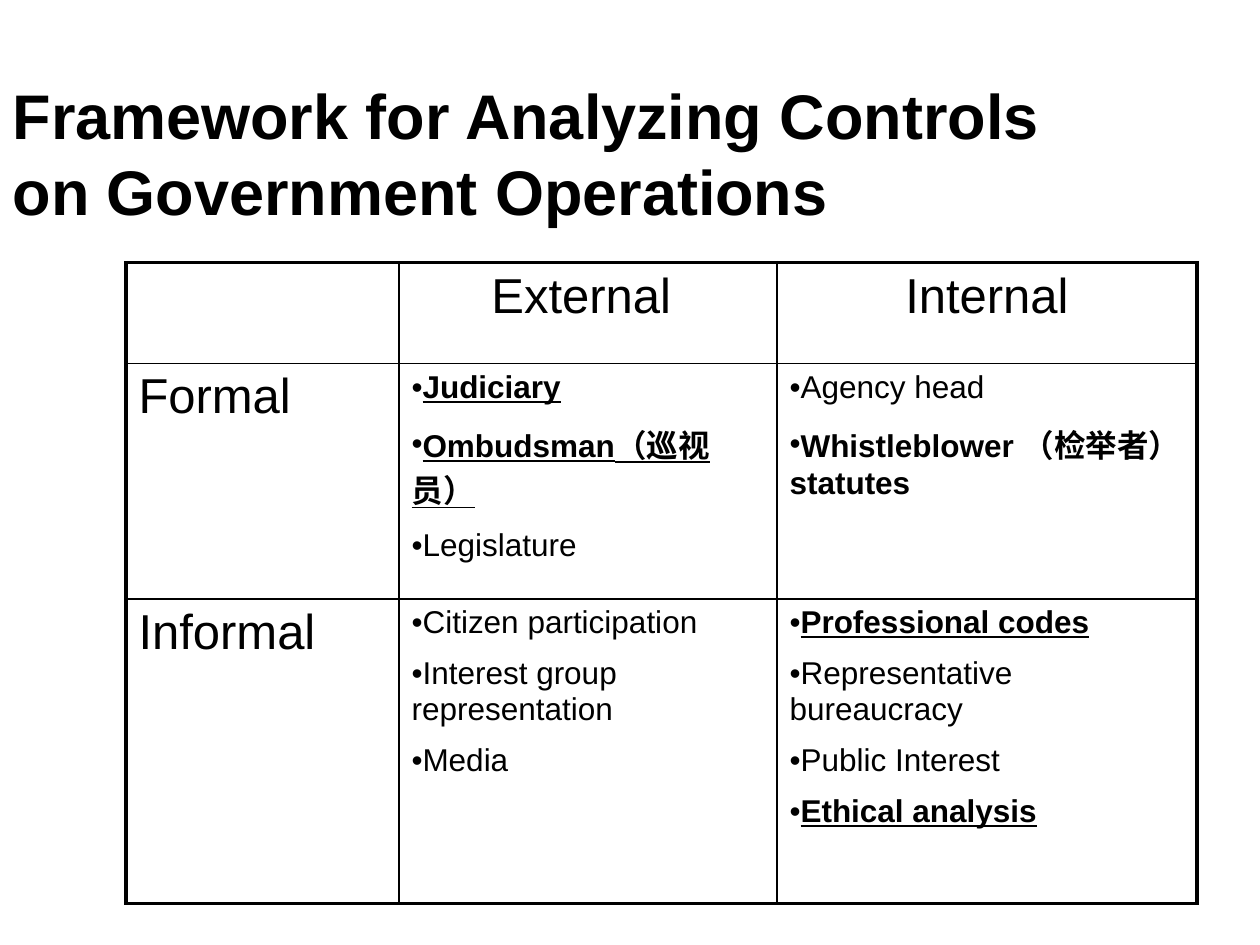
from lxml.etree import SubElement
from pptx import Presentation
from pptx.dml.color import RGBColor
from pptx.enum.text import MSO_ANCHOR, MSO_AUTO_SIZE, PP_ALIGN
from pptx.oxml.ns import qn
from pptx.util import Pt

FONT = "Arial"
INK = "000000"
HEAD_SIZE, LIST_SIZE = 28, 18
OUTER, INNER = 2.25, 1
COLS = [156, 216, 240]
ROWS = [57.6, 134.6, 174.2]

# Each list item is (text, bold, underline)
HEADERS = ["", "External ", "Internal"]
BODY = [
    ("Formal",
     [("Judiciary", True, True),
      ("Ombudsman（巡视员）", True, True),
      ("Legislature", False, False)],
     [("Agency head", False, False),
      ("Whistleblower （检举者）statutes", True, False)]),
    ("Informal",
     [("Citizen participation", False, False),
      ("Interest group representation", False, False),
      ("Media", False, False)],
     [("Professional codes", True, True),
      ("Representative bureaucracy", False, False),
      ("Public Interest", False, False),
      ("Ethical analysis", True, True)]),
]


def color(value):
    return RGBColor.from_string(value)


def add_run(p, text, size, bold=False, underline=False):
    r = p.add_run()
    r.text = text
    r.font.name = FONT
    r.font.size = Pt(size)
    r.font.bold = bold
    r.font.underline = underline
    r.font.color.rgb = color(INK)


def set_borders(cell, widths):
    tc_pr = cell._tc.get_or_add_tcPr()
    for side, width in zip("LRTB", widths):
        ln = SubElement(tc_pr, qn(f"a:ln{side}"), w=str(Pt(width)))
        fill = SubElement(ln, qn("a:solidFill"))
        SubElement(fill, qn("a:srgbClr"), val=INK)


def add_heading(cell, text, align):
    p = cell.text_frame.paragraphs[0]
    p.alignment = align
    add_run(p, text, HEAD_SIZE)


def add_bullets(cell, items):
    tf = cell.text_frame
    for i, (text, bold, underline) in enumerate(items):
        p = tf.add_paragraph() if i else tf.paragraphs[0]
        p_pr = p._p.get_or_add_pPr()
        p_pr.set("marL", "0")
        p_pr.set("indent", "0")
        SubElement(p_pr, qn("a:buFont"), typeface=FONT)
        SubElement(p_pr, qn("a:buChar"), char="•")
        if i:
            p.space_before = Pt(LIST_SIZE / 2)
        add_run(p, text, LIST_SIZE, bold, underline)


def place_title(slide, left, top, width, height):
    sp = slide.shapes.title
    sp.left, sp.top, sp.width, sp.height = map(Pt, (left, top, width, height))
    tf = sp.text_frame
    tf.word_wrap = True
    tf.auto_size = MSO_AUTO_SIZE.NONE
    tf.vertical_anchor = MSO_ANCHOR.MIDDLE
    p = tf.paragraphs[0]
    p.alignment = PP_ALIGN.LEFT
    add_run(p, "Framework for Analyzing Controls on Government Operations",
            36, bold=True)


def place_controls_table(slide, left, top, width, height):
    table = slide.shapes.add_table(
        len(ROWS), len(COLS), *map(Pt, (left, top, width, height))).table
    table.first_row = table.horz_banding = False

    # Columns and rows share out the box
    for col, part in zip(table.columns, COLS):
        col.width = Pt(width * part / sum(COLS))
    for row, part in zip(table.rows, ROWS):
        row.height = Pt(height * part / sum(ROWS))

    # Heavy frame, thin inner lines, no fill
    last_row, last_col = len(ROWS) - 1, len(COLS) - 1
    for i in range(len(ROWS)):
        for j in range(len(COLS)):
            cell = table.cell(i, j)
            on_frame = (j == 0, j == last_col, i == 0, i == last_row)
            set_borders(cell, [OUTER if edge else INNER for edge in on_frame])
            cell.fill.background()

    # Header row
    for j, text in enumerate(HEADERS):
        if text:
            add_heading(table.cell(0, j), text, PP_ALIGN.CENTER)
        else:
            table.cell(0, j).text_frame.paragraphs[0].font.size = Pt(HEAD_SIZE)

    # Body rows
    for i, (label, *lists) in enumerate(BODY, start=1):
        add_heading(table.cell(i, 0), label, PP_ALIGN.LEFT)
        for j, items in enumerate(lists, start=1):
            add_bullets(table.cell(i, j), items)


def main():
    prs = Presentation()
    prs.slide_width, prs.slide_height = Pt(720), Pt(540)
    slide = prs.slides.add_slide(prs.slide_layouts[5])
    slide.background.fill.solid()
    slide.background.fill.fore_color.rgb = color("FFFFFF")
    place_title(slide, 0, 42, 648, 90)
    place_controls_table(slide, 72, 150, sum(COLS), sum(ROWS))
    prs.save("out.pptx")


if __name__ == "__main__":
    main()
